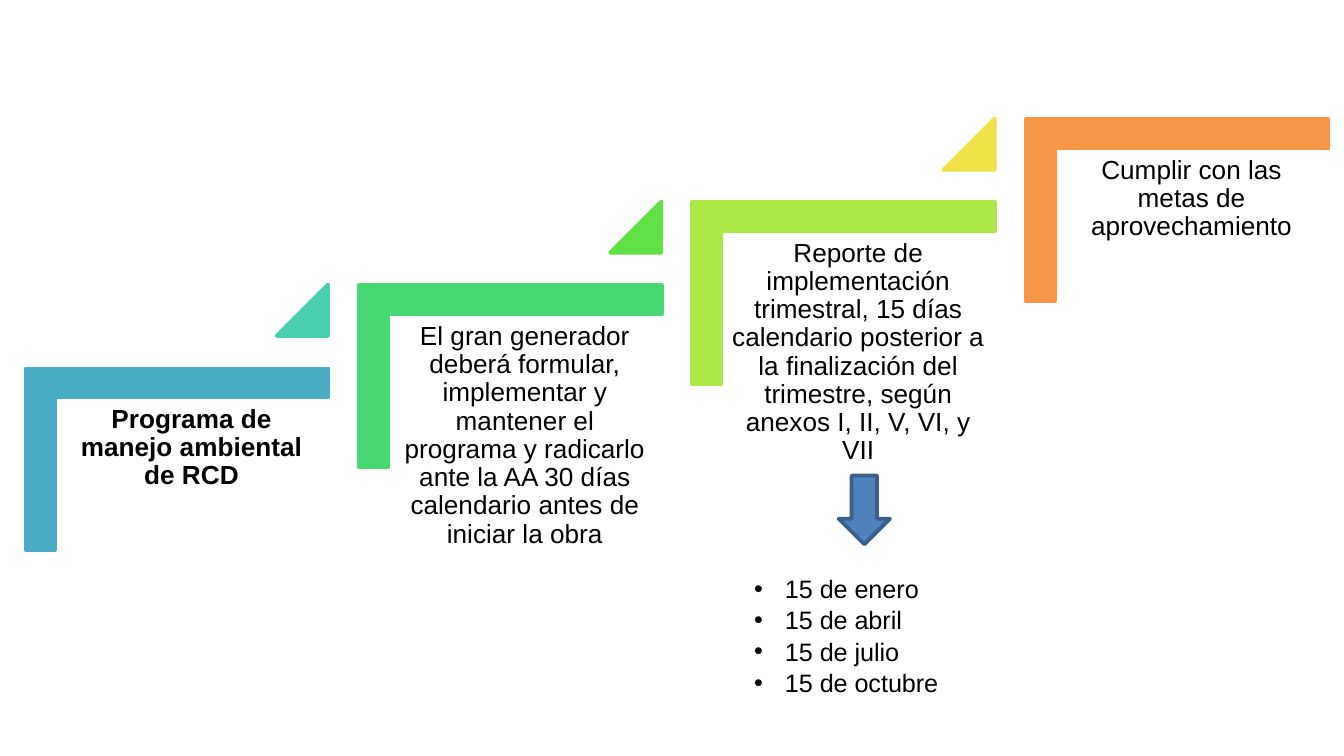
from pptx import Presentation
from pptx.dml.color import RGBColor
from pptx.enum.shapes import MSO_SHAPE
from pptx.enum.text import MSO_ANCHOR, MSO_AUTO_SIZE, PP_ALIGN
from pptx.util import Cm, Pt

CORNER = MSO_SHAPE.CORNER
WEDGE = MSO_SHAPE.ISOSCELES_TRIANGLE
ARROW = MSO_SHAPE.DOWN_ARROW
CENTER, LEFT = PP_ALIGN.CENTER, PP_ALIGN.LEFT
TOP = MSO_ANCHOR.TOP
FIT = MSO_AUTO_SIZE.SHAPE_TO_FIT_TEXT

# Content: text, bold, corner colour, wedge colour
STEPS = [
    ("Programa de manejo ambiental de RCD", True, "4BACC6", "49CFAE"),
    ("El gran generador deberá formular, implementar y mantener el programa "
     "y radicarlo ante la AA 30 días calendario antes de iniciar la obra",
     False, "47D872", "60E146"),
    ("Reporte de implementación trimestral, 15 días calendario posterior a la "
     "finalización del trimestre, según anexos I, II, V, VI, y VII",
     False, "ACE946", "F0E146"),
    ("Cumplir con las metas de aprovechamiento", False, "F79646", None),
]
DATES = ["15 de enero", "15 de abril", "15 de julio", "15 de octubre"]

THEME = {"font": "Arial", "ink": "000000", "step": 14, "date": 13.5,
         "line": 2, "arrow": "4F81BD", "edge": "3A5F8C"}

# Layout in cm: each step moves right and up
RUN, RISE = 6.3, 1.57
CORNER_BOX = (1.63, 5.82, 3.43, 5.72)
TEXT_BOX = (1.04, 7.52, 5.16, 4.52)
WEDGE_BOX = (5.23, 5.38, 0.97, 0.97)
ARROW_BOX = (15.85, 8.99, 0.97, 1.3)
DATE_BOX = (14, 10.69, 4.67, 2.57)
INSET, INDENT = 0.15, 0.58


def climb(box, n):
    left, top, width, height = box
    return left + n * RUN, top - n * RISE, width, height


def draw(kind, box, fill, edge):
    shape = slide.shapes.add_shape(kind, *map(Cm, box))
    shape.shadow.inherit = False
    shape.fill.solid()
    shape.fill.fore_color.rgb = RGBColor.from_string(fill)
    shape.line.color.rgb = RGBColor.from_string(edge)
    shape.line.width = Pt(THEME["line"])
    return shape


def style(para, size, align, space, bold=False):
    para.alignment = align
    para.line_spacing = space
    para.space_before = Pt(0)
    for run in para.runs:
        font = run.font
        font.name, font.size, font.bold = THEME["font"], Pt(size), bold
        font.color.rgb = RGBColor.from_string(THEME["ink"])


deck = Presentation()
deck.slide_width, deck.slide_height = Cm(25.4), Cm(14.29)
slide = deck.slides.add_slide(deck.slide_layouts[1])
title = slide.shapes.title.element
title.getparent().remove(title)

# Staircase
for n, (text, bold, color, tint) in enumerate(STEPS):
    corner = draw(CORNER, climb(CORNER_BOX, n), color, color)
    corner.rotation = 90
    corner.adjustments[0] = corner.adjustments[1] = 0.16

    label = slide.shapes.add_textbox(*map(Cm, climb(TEXT_BOX, n)))
    frame = label.text_frame
    frame.word_wrap = True
    frame.vertical_anchor = TOP
    frame.margin_left = frame.margin_right = Cm(INSET)
    frame.margin_top = frame.margin_bottom = Cm(INSET)
    frame.text = text
    style(frame.paragraphs[0], THEME["step"], CENTER, 0.9, bold)

    if tint:
        wedge = draw(WEDGE, climb(WEDGE_BOX, n), tint, tint)
        wedge.adjustments[0] = 1

# Report dates
body = slide.placeholders[1]
body.left, body.top, body.width, body.height = map(Cm, DATE_BOX)
frame = body.text_frame
frame.auto_size = FIT
frame.text = "\n".join(DATES)
for para in frame.paragraphs:
    props = para._p.get_or_add_pPr()
    props.set("marL", str(Cm(INDENT)))
    props.set("indent", str(-Cm(INDENT)))
    style(para, THEME["date"], LEFT, 1.04)

# Arrow to the dates
draw(ARROW, ARROW_BOX, THEME["arrow"], THEME["edge"])

deck.save("out.pptx")
